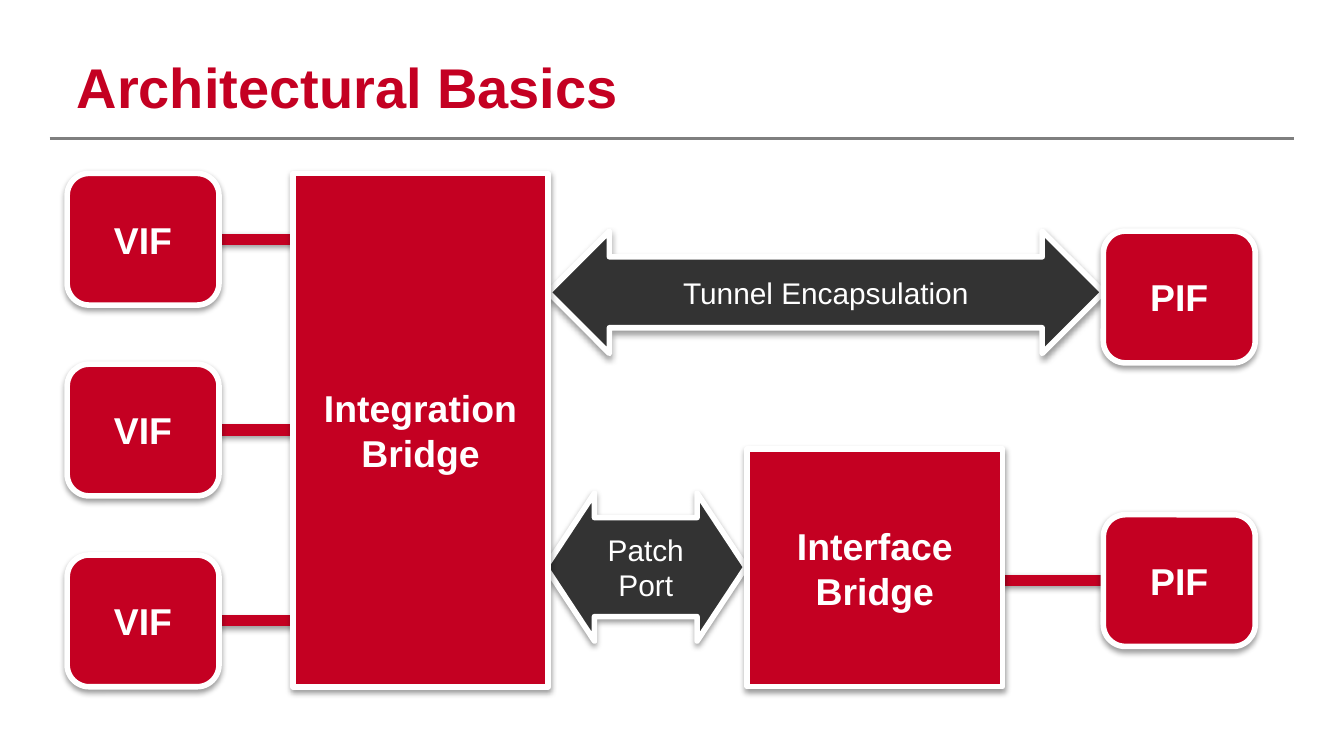
from dataclasses import dataclass

from lxml import etree
from pptx import Presentation
from pptx.dml.color import RGBColor
from pptx.enum.shapes import MSO_CONNECTOR, MSO_SHAPE
from pptx.enum.text import MSO_ANCHOR, PP_ALIGN
from pptx.oxml.ns import qn
from pptx.shapes.autoshape import Shape
from pptx.shapes.connector import Connector
from pptx.slide import Slide
from pptx.util import Inches, Pt

STRAIGHT = MSO_CONNECTOR.STRAIGHT
RECTANGLE = MSO_SHAPE.RECTANGLE
ROUNDED = MSO_SHAPE.ROUNDED_RECTANGLE
DOUBLE_ARROW = MSO_SHAPE.LEFT_RIGHT_ARROW
CENTER = PP_ALIGN.CENTER
LEFT = PP_ALIGN.LEFT
MIDDLE = MSO_ANCHOR.MIDDLE
BOTTOM = MSO_ANCHOR.BOTTOM
LEFT_SIDE, RIGHT_SIDE = 1, 3

FONT = "Arial"
COLORS = {"red": "C40022", "dark": "333333", "white": "FFFFFF", "rule": "7F7F7F", "shadow": "000000"}

SLIDE_WIDTH = 10
SLIDE_HEIGHT = SLIDE_WIDTH * 9 / 16
PORT_WIDTH, PORT_HEIGHT = 1.13, 0.98
VIF_LEFT, VIF_TOP, VIF_PITCH = 0.5, 1.29, 1.42
PIF_LEFT = 8.21
BRIDGE_WIDTH = 1.9
BRIDGE_BOTTOM = 5.11


@dataclass(frozen=True)
class Block:
    text: str
    kind: MSO_SHAPE
    left: float
    top: float
    width: float
    height: float
    fill: str = "red"
    size: int = 20
    bold: bool = True
    adjustments: tuple[float, ...] = ()


def port(text: str, left: float, top: float) -> Block:
    return Block(text, ROUNDED, left, top, PORT_WIDTH, PORT_HEIGHT)


def bridge(text: str, left: float, top: float) -> Block:
    return Block(text, RECTANGLE, left, top, BRIDGE_WIDTH, BRIDGE_BOTTOM - top)


VIFS = [port("VIF", VIF_LEFT, VIF_TOP + row * VIF_PITCH) for row in range(3)]
TUNNEL_PIF = port("PIF", PIF_LEFT, 1.72)
BRIDGE_PIF = port("PIF", PIF_LEFT, 3.83)
INTEGRATION = bridge("Integration Bridge", 2.18, VIF_TOP)
INTERFACE = bridge("Interface Bridge", 5.56, 3.34)
ARROWS = [
    Block("Patch Port", DOUBLE_ARROW, 4.06, 3.67, 1.49, 1.1, "dark", 16, False, (0.67, 0.33)),
    Block("Tunnel Encapsulation", DOUBLE_ARROW, 4.08, 1.72, 4.13, 0.91, "dark", 16, False, (0.58, 0.5)),
]


def color(name: str) -> RGBColor:
    return RGBColor.from_string(COLORS[name])


def add_text(shape: Shape, text: str, size: int, bold: bool, color_name: str) -> None:
    run = shape.text_frame.paragraphs[0].add_run()
    run.text = text
    run.font.name = FONT
    run.font.size = Pt(size)
    run.font.bold = bold
    run.font.color.rgb = color(color_name)


def add_shadow(effects: etree._Element) -> None:
    """Put a soft downward shadow into an effect list."""
    shadow = etree.SubElement(
        effects, qn("a:outerShdw"), blurRad="40000", dist="20000", dir="5400000", rotWithShape="0"
    )
    shade = etree.SubElement(shadow, qn("a:srgbClr"), val=COLORS["shadow"])
    etree.SubElement(shade, qn("a:alpha"), val="38000")


def add_line(slide: Slide, left: float, right: float, y: float, color_name: str, width: float) -> Connector:
    """Draw a horizontal line with an empty effect list."""
    line = slide.shapes.add_connector(STRAIGHT, Inches(left), Inches(y), Inches(right), Inches(y))
    line.line.color.rgb = color(color_name)
    line.line.width = Pt(width)
    etree.SubElement(line._element.spPr, qn("a:effectLst"))
    return line


def add_wire(slide: Slide, left: float, right: float, block: Block) -> Connector:
    """Draw a thick link at the middle height of a port."""
    wire = add_line(slide, left, right, block.top + block.height / 2, "red", 6)
    add_shadow(wire._element.spPr.find(qn("a:effectLst")))
    return wire


def add_block(slide: Slide, block: Block) -> Shape:
    shape = slide.shapes.add_shape(
        block.kind, Inches(block.left), Inches(block.top), Inches(block.width), Inches(block.height)
    )
    for index, value in enumerate(block.adjustments):
        shape.adjustments[index] = value
    shape.fill.solid()
    shape.fill.fore_color.rgb = color(block.fill)
    shape.line.color.rgb = color("white")
    shape.line.width = Pt(3)
    shape.shadow.inherit = False
    add_shadow(shape._element.spPr.find(qn("a:effectLst")))
    shape.text_frame.word_wrap = True
    shape.text_frame.vertical_anchor = MIDDLE
    shape.text_frame.paragraphs[0].alignment = CENTER
    add_text(shape, block.text, block.size, block.bold, "white")
    return shape


def add_title(slide: Slide, text: str) -> None:
    title = slide.shapes.title
    title.left, title.top = Inches(0.5), Inches(0.32)
    title.width, title.height = Inches(9), Inches(0.65)
    frame = title.text_frame
    frame.margin_left = frame.margin_right = Inches(0.07)
    frame.margin_top = frame.margin_bottom = Inches(0.07)
    frame.vertical_anchor = BOTTOM
    frame.word_wrap = True
    frame.paragraphs[0].alignment = LEFT
    frame.paragraphs[0].line_spacing = 0.9
    add_text(title, text, 30, True, "red")


def main() -> None:
    presentation = Presentation()
    presentation.slide_width = Inches(SLIDE_WIDTH)
    presentation.slide_height = Inches(SLIDE_HEIGHT)
    slide = presentation.slides.add_slide(presentation.slide_layouts[5])
    add_title(slide, "Architectural Basics")
    add_line(slide, 0.37, 9.63, 1.03, "rule", 1.5)

    # Wires come first so that the white outlines of the blocks cover their ends.
    vif_wires = [add_wire(slide, VIF_LEFT + PORT_WIDTH, INTEGRATION.left, vif) for vif in VIFS]
    pif_wire = add_wire(slide, INTERFACE.left + BRIDGE_WIDTH, PIF_LEFT, BRIDGE_PIF)

    for arrow in ARROWS:
        add_block(slide, arrow)
    for vif, wire in zip(VIFS, vif_wires):
        wire.begin_connect(add_block(slide, vif), RIGHT_SIDE)
    pif_wire.end_connect(add_block(slide, BRIDGE_PIF), LEFT_SIDE)
    add_block(slide, TUNNEL_PIF)
    # The middle wire meets the middle of the bridge's left side.
    vif_wires[1].end_connect(add_block(slide, INTEGRATION), LEFT_SIDE)
    add_block(slide, INTERFACE)

    presentation.save("out.pptx")


if __name__ == "__main__":
    main()
